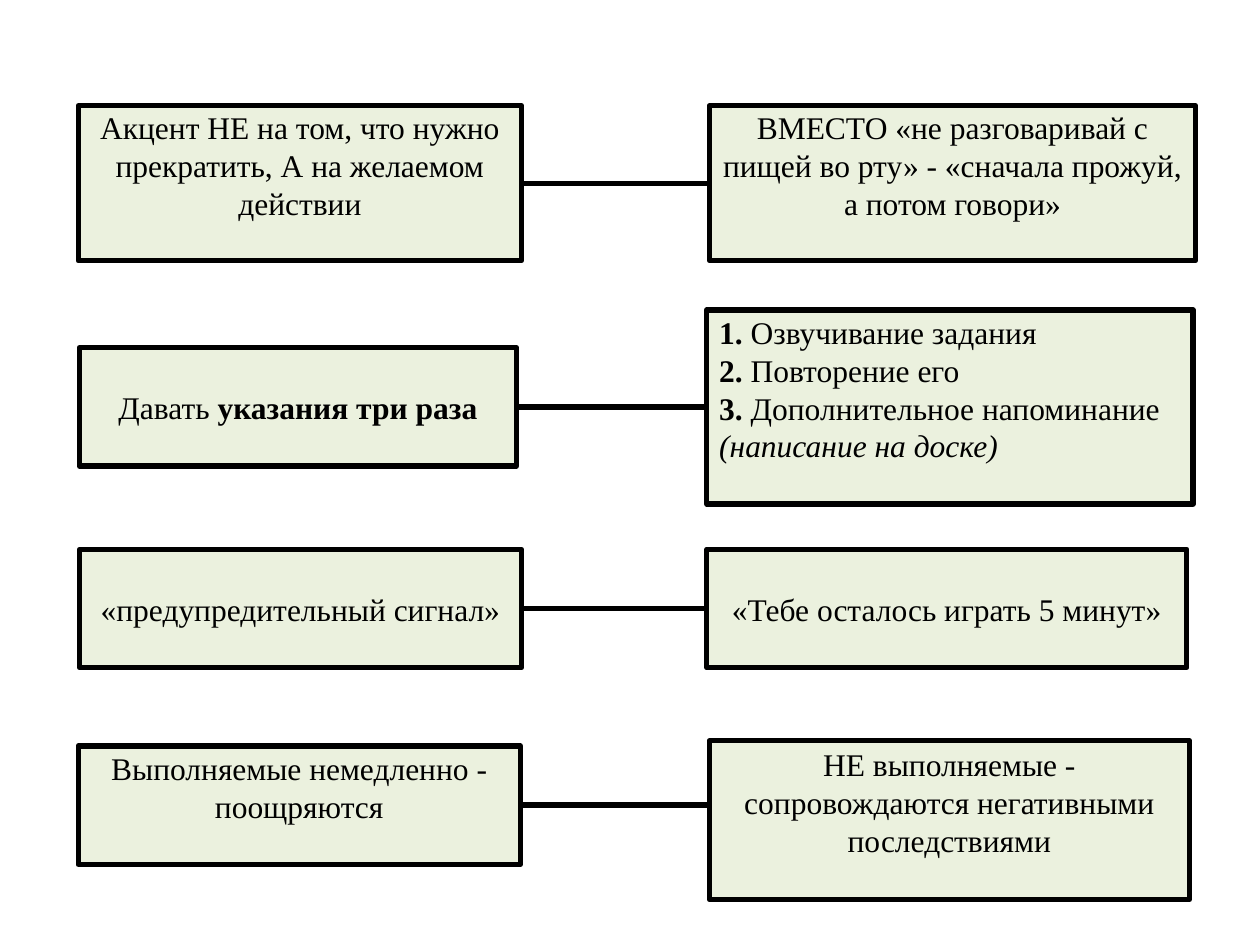
from lxml.etree import SubElement
from pptx import Presentation
from pptx.dml.color import RGBColor
from pptx.enum.shapes import MSO_CONNECTOR as CONN, MSO_SHAPE as SHAPE
from pptx.enum.text import MSO_ANCHOR as ANCHOR, PP_ALIGN as ALIGN
from pptx.oxml.ns import qn
from pptx.util import Inches, Pt

FONT = "Times New Roman"
BLACK, PALE_GREEN = "000000", "EBF1DE"
LINE_WIDTH = 3
RAISED = 0.34  # bottom inset that lifts the text by half a line

# Each row: left box and right box as (position, paragraphs, format);
# a paragraph is a list of (text, style), with b for bold and i for italic
ROWS = [
    (((0.62, 0.84, 3.52, 1.23),
      [[("Акцент НЕ на том, что нужно прекратить, А на желаемом действии", "")]],
      {"bottom": RAISED}),
     ((5.63, 0.84, 3.86, 1.23),
      [[("ВМЕСТО «не разговаривай с пищей во рту» - «сначала прожуй, "
         "а потом говори»", "")]],
      {"bottom": RAISED})),
    (((0.63, 2.76, 3.47, 0.94),
      [[("Давать ", ""), ("указания три раза", "b")]], {}),
     ((5.61, 2.46, 3.86, 1.54),
      [[("1. ", "b"), ("Озвучивание задания", "")],
       [("2. ", "b"), ("Повторение его", "")],
       [("3. ", "b"), ("Дополнительное напоминание", "")],
       [("(написание на доске)", "i")]],
      {"bottom": RAISED, "align": ALIGN.LEFT})),
    (((0.63, 4.36, 3.51, 0.94), [[("«предупредительный сигнал»", "")]], {}),
     ((5.61, 4.36, 3.81, 0.94), [[("«Тебе осталось играть 5 минут»", "")]], {})),
    (((0.62, 5.92, 3.51, 0.94),
      [[("Выполняемые немедленно - поощряются", "")]], {"bottom": RAISED}),
     ((5.63, 5.88, 3.81, 1.26),
      [[("НЕ выполняемые - сопровождаются негативными последствиями", "")]],
      {"bottom": RAISED})),
]


def rgb(color):
    return RGBColor.from_string(color)


def set_line(line):
    line.color.rgb = rgb(BLACK)
    line.width = Pt(LINE_WIDTH)


def add_text(tf, paragraphs, align=ALIGN.CENTER, bottom=0.05, size=18, color=BLACK):
    tf.word_wrap = True
    tf.vertical_anchor = ANCHOR.MIDDLE
    tf.margin_bottom = Inches(bottom)
    for n, runs in enumerate(paragraphs):
        p = tf.add_paragraph() if n else tf.paragraphs[0]
        p.alignment = align
        for text, style in runs:
            r = p.add_run()
            r.text = text
            r.font.name = FONT
            r.font.size = Pt(size)
            r.font.color.rgb = rgb(color)
            r.font.bold = "b" in style
            r.font.italic = "i" in style


def add_box(slide, position, paragraphs, text_format):
    sp = slide.shapes.add_shape(SHAPE.RECTANGLE, *map(Inches, position))
    sp.shadow.inherit = False
    sp.fill.solid()
    sp.fill.fore_color.rgb = rgb(PALE_GREEN)
    set_line(sp.line)
    add_text(sp.text_frame, paragraphs, **text_format)
    return sp


def add_link(slide, left, right):
    """Level line from the middle of the left box to the right box."""
    y = left.top + left.height // 2
    link = slide.shapes.add_connector(
        CONN.STRAIGHT, left.left + left.width, y, right.left, y)
    set_line(link.line)
    SubElement(link.element.spPr, qn("a:effectLst"))


def main():
    prs = Presentation()
    prs.slide_width, prs.slide_height = Inches(10), Inches(7.5)
    s = prs.slides.add_slide(prs.slide_layouts[6])

    # Pairs of boxes, each joined by a line
    for left, right in ROWS:
        add_link(s, add_box(s, *left), add_box(s, *right))

    prs.save("out.pptx")


if __name__ == "__main__":
    main()
